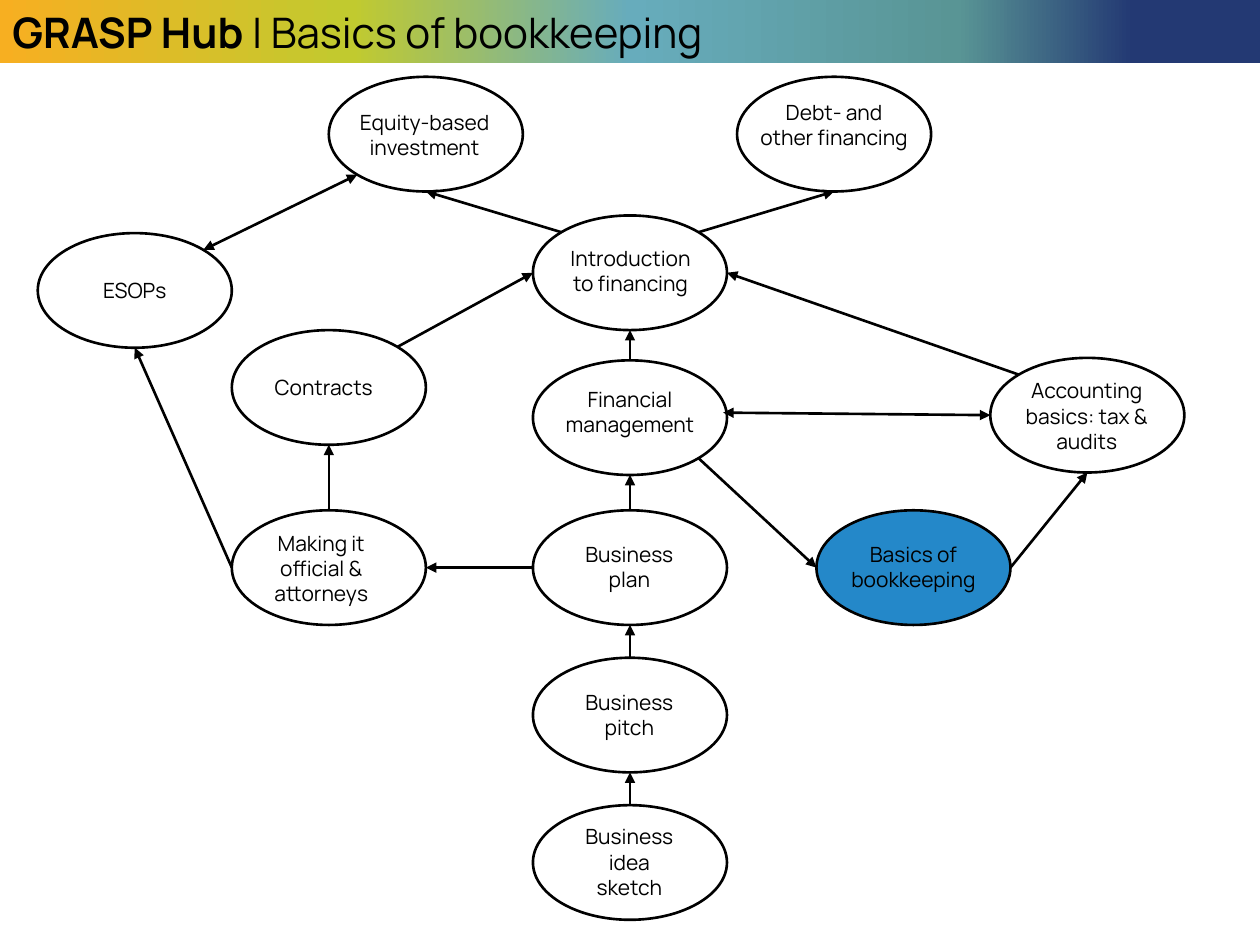
"""Build a one-slide map of business topics leading to the basics of bookkeeping."""
from lxml import etree
from pptx import Presentation
from pptx.dml.color import RGBColor
from pptx.enum.shapes import MSO_CONNECTOR, MSO_SHAPE
from pptx.enum.text import MSO_ANCHOR, PP_ALIGN
from pptx.oxml.ns import qn
from pptx.util import Inches, Pt

STRAIGHT = MSO_CONNECTOR.STRAIGHT
OVAL, RECTANGLE = MSO_SHAPE.OVAL, MSO_SHAPE.RECTANGLE
CENTER, LEFT = PP_ALIGN.CENTER, PP_ALIGN.LEFT
TOP, MIDDLE = MSO_ANCHOR.TOP, MSO_ANCHOR.MIDDLE

BLACK = RGBColor(0x00, 0x00, 0x00)
HIGHLIGHT = RGBColor(0x24, 0x88, 0xC9)
BANNER_STOPS = [
    (0, RGBColor(0xF7, 0xAF, 0x21)),
    (28, RGBColor(0xC1, 0xCA, 0x2F)),
    (50, RGBColor(0x67, 0xAC, 0xBC)),
    (76, RGBColor(0x59, 0x95, 0x95)),
    (90, RGBColor(0x23, 0x39, 0x73)),
]
FONT = "Manrope"
SLIDE_W, SLIDE_H, BANNER_H = 10, 7.5, 0.5
TOPIC_W, TOPIC_H = 1.54, 0.91
DIAGONAL = 0.5 ** 0.5
LINE_WIDTH = Pt(1.5)

TITLE = [("GRASP Hub ", True), ("| Basics of bookkeeping", False)]
MIDDLE_X, OFFICIAL_X, PLAN_Y = 4.23, 1.84, 4.05

# topic: (left, top), paragraphs, (label left, top, width, height)
TOPICS = {
    "sketch": ((MIDDLE_X, 6.39), ["Business idea sketch"], (4.5, 6.49, 0.99, 0.71)),
    "pitch": ((MIDDLE_X, 5.22), ["Business pitch"], (4.5, 5.42, 0.99, 0.5)),
    "plan": ((MIDDLE_X, PLAN_Y), ["Business plan"], (4.5, 4.25, 0.99, 0.5)),
    "financing": ((MIDDLE_X, 1.71), ["Introduction to financing"], (4.37, 1.9, 1.27, 0.5)),
    "bookkeeping": ((6.48, PLAN_Y), ["Basics of bookkeeping"], (6.56, 4.25, 1.38, 0.5)),
    "official": ((OFFICIAL_X, PLAN_Y), ["Making it official & attorneys"], (2, 4.16, 1.1, 0.71)),
    "accounting": ((7.86, 2.84), ["Accounting basics: tax & audits"], (7.99, 2.95, 1.27, 0.71)),
    "contracts": ((OFFICIAL_X, 2.62), ["Contracts"], (1.94, 2.92, 1.26, 0.3)),
    "equity": ((2.61, 0.61), ["Equity-based", "investment"], (2.67, 0.82, 1.4, 0.5)),
    "debt": ((5.85, 0.61), ["Debt- and other financing"], (5.92, 0.74, 1.4, 0.71)),
    "management": ((MIDDLE_X, 2.86), ["Financial management"], (4.26, 3.02, 1.48, 0.5)),
    "esops": ((0.3, 1.85), ["ESOPs"], (0.44, 2.15, 1.26, 0.3)),
}
CURRENT_TOPIC = "bookkeeping"

SIDES = {
    "N": (0, -1), "S": (0, 1), "W": (-1, 0), "E": (1, 0),
    "NW": (-DIAGONAL, -DIAGONAL), "NE": (DIAGONAL, -DIAGONAL),
    "SW": (-DIAGONAL, DIAGONAL), "SE": (DIAGONAL, DIAGONAL),
}
ARROWS = [
    ("sketch", "N", "pitch", "S"),
    ("pitch", "N", "plan", "S"),
    ("plan", "N", "management", "S"),
    ("management", "N", "financing", "S"),
    ("financing", "NE", "debt", "S"),
    ("financing", "NW", "equity", "S"),
    ("plan", "W", "official", "E"),
    ("management", "SE", "bookkeeping", "W"),
    ("bookkeeping", "E", "accounting", "S"),
    ("official", "N", "contracts", "S"),
    ("contracts", "NE", "financing", "W"),
    ("accounting", "NW", "financing", "E"),
    ("official", "W", "esops", "S"),
]
MUTUAL_ARROWS = [
    ("accounting", "W", "management", "E", (-0.03, -0.04)),
    ("equity", "SW", "esops", "NE", (0, 0)),
]


def inches(values):
    return [Inches(value) for value in values]


def add_run(paragraph, text, size, bold=False):
    run = paragraph.add_run()
    run.text = text
    run.font.name, run.font.size, run.font.bold = FONT, Pt(size), bold
    run.font.color.rgb = BLACK


def add_banner(slide):
    banner = slide.shapes.add_shape(RECTANGLE, *inches((0, 0, SLIDE_W, BANNER_H)))
    banner.shadow.inherit = False
    banner.line.fill.background()
    banner.fill.gradient()
    banner.fill.gradient_angle = 0
    stops = banner._element.spPr.find(qn("a:gradFill")).find(qn("a:gsLst"))
    for stop in list(stops):
        stops.remove(stop)
    for percent, color in BANNER_STOPS:
        stop = etree.SubElement(stops, qn("a:gs"), pos=str(percent * 1000))
        etree.SubElement(stop, qn("a:srgbClr"), val=str(color))
    banner.text_frame.word_wrap = True
    banner.text_frame.vertical_anchor = MIDDLE
    paragraph = banner.text_frame.paragraphs[0]
    paragraph.alignment = LEFT
    for text, bold in TITLE:
        add_run(paragraph, text, 24, bold)


def add_topic(slide, topic):
    corner, lines, label_area = TOPICS[topic]
    oval = slide.shapes.add_shape(OVAL, *inches((*corner, TOPIC_W, TOPIC_H)))
    oval.shadow.inherit = False
    oval.line.color.rgb, oval.line.width = BLACK, LINE_WIDTH
    if topic == CURRENT_TOPIC:
        oval.fill.solid()
        oval.fill.fore_color.rgb = HIGHLIGHT
    else:
        oval.fill.background()
    label = slide.shapes.add_textbox(*inches(label_area)).text_frame
    label.word_wrap, label.vertical_anchor = True, TOP
    for index, line in enumerate(lines):
        paragraph = label.add_paragraph() if index else label.paragraphs[0]
        paragraph.alignment = CENTER
        add_run(paragraph, line, 12)


def edge_point(topic, side, shift=(0, 0)):
    (left, top), (across, down) = TOPICS[topic][0], SIDES[side]
    return (left + TOPIC_W / 2 * (1 + across) + shift[0],
            top + TOPIC_H / 2 * (1 + down) + shift[1])


def add_arrow(slide, start, end, ends):
    arrow = slide.shapes.add_connector(STRAIGHT, *inches((*start, *end)))
    arrow.line.color.rgb, arrow.line.width = BLACK, LINE_WIDTH
    properties = arrow._element.spPr
    for end_tag in ends:
        etree.SubElement(properties.find(qn("a:ln")), qn(end_tag), type="triangle")
    etree.SubElement(properties, qn("a:effectLst"))


def main():
    deck = Presentation()
    deck.slide_width, deck.slide_height = inches((SLIDE_W, SLIDE_H))
    slide = deck.slides.add_slide(deck.slide_layouts[6])
    add_banner(slide)
    for topic in TOPICS:
        add_topic(slide, topic)
    for source, source_side, target, target_side in ARROWS:
        add_arrow(slide, edge_point(source, source_side),
                  edge_point(target, target_side), ["a:tailEnd"])
    for source, source_side, target, target_side, shift in MUTUAL_ARROWS:
        add_arrow(slide, edge_point(source, source_side),
                  edge_point(target, target_side, shift), ["a:headEnd", "a:tailEnd"])
    deck.save("out.pptx")


if __name__ == "__main__":
    main()
